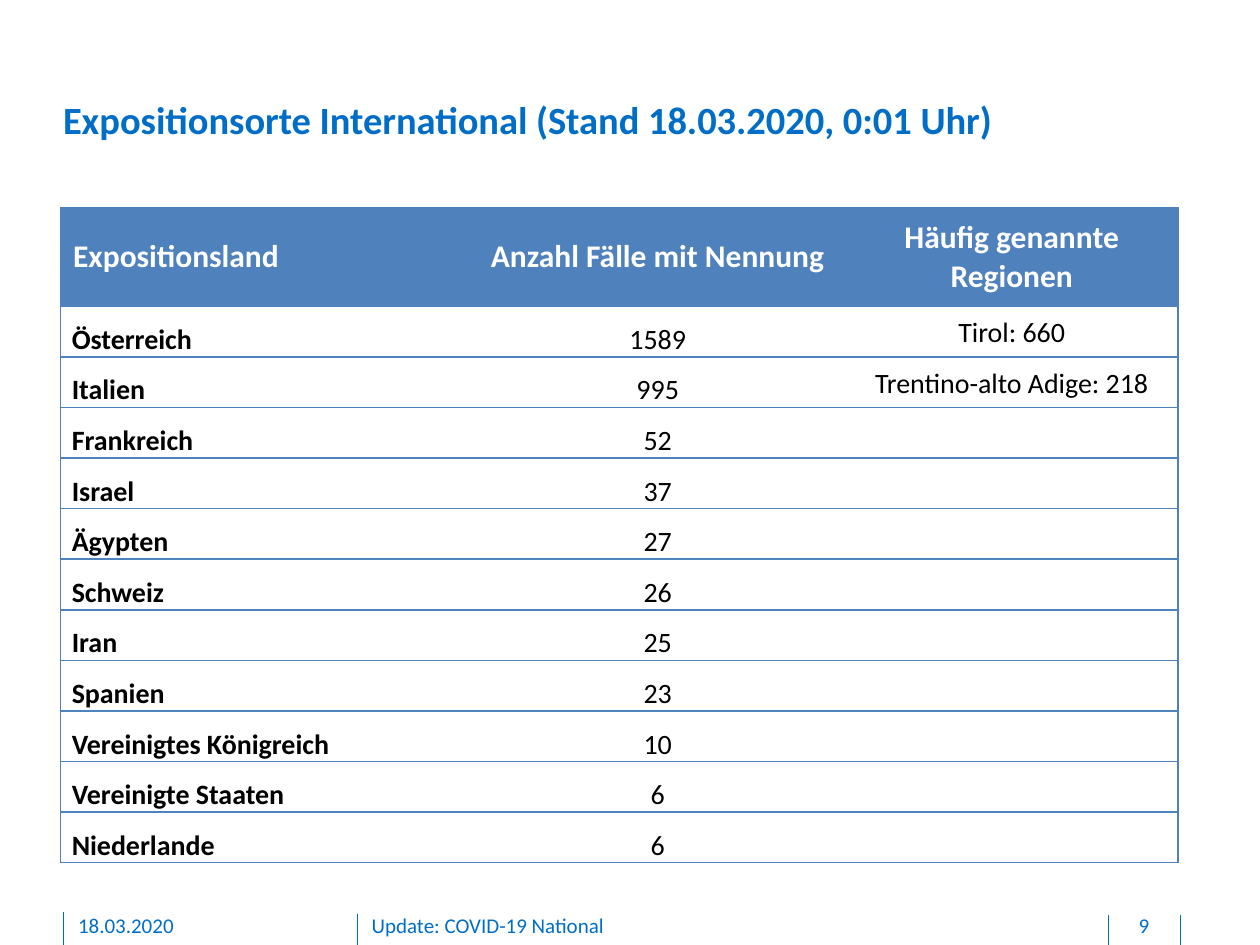
from lxml.etree import SubElement
from pptx import Presentation
from pptx.dml.color import RGBColor
from pptx.enum.shapes import MSO_CONNECTOR as Connector
from pptx.enum.text import MSO_ANCHOR as Anchor, PP_ALIGN as Align
from pptx.oxml.ns import qn
from pptx.util import Inches, Pt

COLORS = {"accent": "006EC7", "grid": "4F81BD", "white": "FFFFFF", "black": "000000"}
FONT = "Calibri"

prs = Presentation()
prs.slide_width, prs.slide_height = Inches(10), Inches(7.5)
slide = prs.slides.add_slide(prs.slide_layouts[6])


def write(frame, text, size, color, bold=False, align=Align.LEFT):
    paragraph = frame.paragraphs[0]
    paragraph.alignment = align
    font = paragraph.font
    font.name, font.size, font.bold = FONT, Pt(size), bold
    font.color.rgb = RGBColor.from_string(COLORS[color])
    if text:
        paragraph.add_run().text = text


def set_borders(cell, visible):
    """Draw the sides named in visible (of L, R, T, B) and hide the others."""
    properties = cell._tc.get_or_add_tcPr()
    for side in "LRTB":
        border = SubElement(properties, qn(f"a:ln{side}"), w=str(Pt(1)))
        if side in visible:
            fill = SubElement(border, qn("a:solidFill"))
            SubElement(fill, qn("a:srgbClr"), val=COLORS["grid"])
        else:
            SubElement(border, qn("a:noFill"))


# Footer dividers run to the slide's bottom edge
for x, top in [(0.5, 7.24), (2.84, 7.25), (8.8, 7.26), (9.37, 7.26)]:
    divider = slide.shapes.add_connector(
        Connector.STRAIGHT, Inches(x), Inches(top), Inches(x), prs.slide_height)
    divider.line.color.rgb = RGBColor.from_string(COLORS["accent"])
    divider.line.width = Pt(0.5)
    SubElement(divider._element.spPr, qn("a:effectLst"))

# Title and footer: text, left, top, width, height, bottom inset, size, bold, alignment
labels = [
    ("Expositionsorte International (Stand 18.03.2020, 0:01 Uhr)",
     0.5, 0.76, 8.85, 0.37, 0, 22, True, Align.LEFT),
    ("18.03.2020", 0.62, 7.24, 2.03, 0.21, 0.05, 12, False, Align.LEFT),
    ("Update: COVID-19 National", 2.95, 7.24, 5.67, 0.21, 0.05, 12, False, Align.LEFT),
    ("9", 8.81, 7.24, 0.54, 0.21, 0.05, 12, False, Align.CENTER),
]
for text, left, top, width, height, inset, size, bold, align in labels:
    frame = slide.shapes.add_textbox(
        Inches(left), Inches(top), Inches(width), Inches(height)).text_frame
    frame.word_wrap = True
    frame.margin_left = frame.margin_top = frame.margin_right = 0
    frame.margin_bottom = Inches(inset)
    write(frame, text, size, "accent", bold, align)

# Exposure table
headings = ("Expositionsland", "Anzahl Fälle mit Nennung", "Häufig genannte Regionen")
countries = [
    ("Österreich", "1589", "Tirol: 660"),
    ("Italien", "995", "Trentino-alto Adige: 218"),
    ("Frankreich", "52", ""),
    ("Israel", "37", ""),
    ("Ägypten", "27", ""),
    ("Schweiz", "26", ""),
    ("Iran", "25", ""),
    ("Spanien", "23", ""),
    ("Vereinigtes Königreich", "10", ""),
    ("Vereinigte Staaten", "6", ""),
    ("Niederlande", "6", ""),
]
column_widths = (3.25, 2.98, 2.64)
table_height, header_height = 5.2, 0.78
country_height = (table_height - header_height) / len(countries)

table = slide.shapes.add_table(
    len(countries) + 1, len(headings), Inches(0.48), Inches(1.65),
    Inches(sum(column_widths)), Inches(table_height)).table
table.first_row = table.horz_banding = False
for column, width in zip(table.columns, column_widths):
    column.width = Inches(width)

for r, values in enumerate([headings, *countries]):
    is_header = r == 0
    table.rows[r].height = Inches(header_height if is_header else country_height)
    for c, value in enumerate(values):
        cell = table.cell(r, c)
        set_borders(cell, ("LTB", "TB", "RTB")[c])
        cell.fill.solid()
        cell.fill.fore_color.rgb = RGBColor.from_string(
            COLORS["grid" if is_header else "white"])
        cell.vertical_anchor = Anchor.MIDDLE if is_header else Anchor.BOTTOM
        if not is_header and c < 2:
            cell.margin_top = cell.margin_right = cell.margin_bottom = 0
            cell.margin_left = Inches(0.09 if c == 0 else 0)
        write(cell.text_frame, value, 18 if is_header else 16,
              "white" if is_header else "black", is_header or c == 0,
              Align.LEFT if c == 0 else Align.CENTER)

prs.save("out.pptx")
